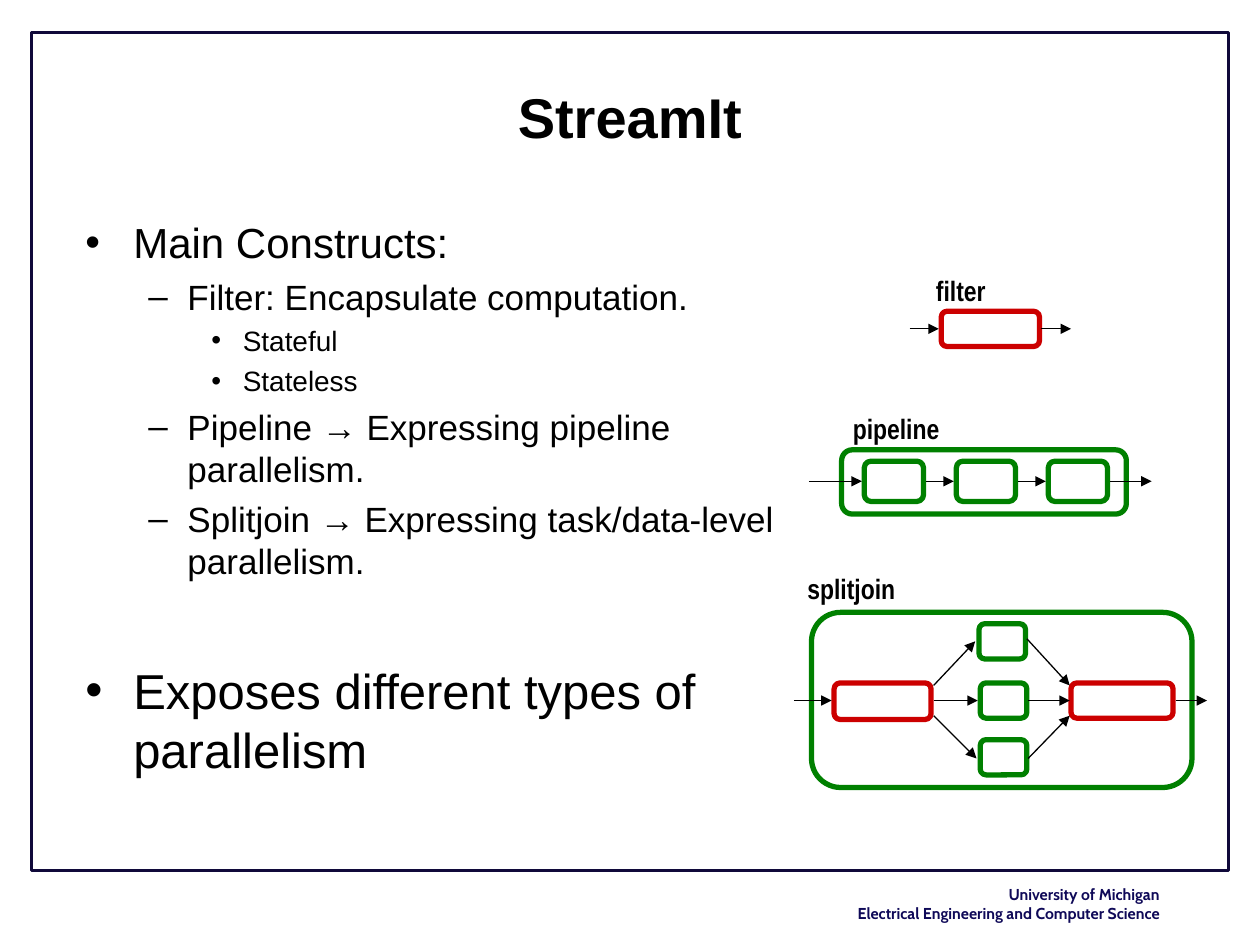
"""Builds the StreamIt slide with its three construct diagrams."""
from lxml import etree
from pptx import Presentation
from pptx.dml.color import RGBColor
from pptx.enum import shapes, text
from pptx.oxml import ns
from pptx.util import Inches, Pt

BLACK = RGBColor(0x00, 0x00, 0x00)
RED = RGBColor(0xCC, 0x00, 0x00)
GREEN = RGBColor(0x00, 0x80, 0x00)
NAVY = RGBColor(0x10, 0x09, 0x3A)
BLUE = RGBColor(0x0F, 0x09, 0x58)
LEFT, MID, RIGHT = text.PP_ALIGN.LEFT, text.PP_ALIGN.CENTER, text.PP_ALIGN.RIGHT
ROUND = shapes.MSO_SHAPE.FLOWCHART_ALTERNATE_PROCESS

prs = Presentation()
prs.slide_width, prs.slide_height = Inches(10), Inches(7.5)
slide = prs.slides.add_slide(prs.slide_layouts[6])


def add_box(kind, area, color, width):
    box = slide.shapes.add_shape(kind, *map(Inches, area))
    box.shadow.inherit = False
    box.fill.background()
    box.line.color.rgb = color
    box.line.width = Pt(width)


def add_text(area, lines, face, size, color, bold, align):
    frame = slide.shapes.add_textbox(*map(Inches, area)).text_frame
    frame.word_wrap = True
    for i, line in enumerate(lines):
        para = frame.paragraphs[0] if i == 0 else frame.add_paragraph()
        para.alignment = align
        run = para.add_run()
        run.text = line
        run.font.name = face
        run.font.size = Pt(size)
        run.font.bold = bold
        run.font.color.rgb = color
    return frame


add_box(shapes.MSO_SHAPE.RECTANGLE, (0.25, 0.26, 9.5, 6.65), NAVY, 1.5)
add_text((6.25, 6.97, 3.05, 0.4),
         ["University of Michigan", "Electrical Engineering and Computer Science"],
         "Cabin", 9, BLUE, True, RIGHT)
title = add_text((0.5, 0.3, 9, 1.25), ["StreamIt"], "Arial", 32, BLACK, True, MID)
title.vertical_anchor = text.MSO_ANCHOR.MIDDLE

levels = [("•", 0.38, 0.38), ("–", 0.81, 0.31), ("•", 1.25, 0.25)]
points = [
    (0, 24, 0, "Main Constructs:"),
    (1, 20, 4.6, "Filter: Encapsulate computation."),
    (2, 16, 3.7, "Stateful"),
    (2, 16, 3.7, "Stateless"),
    (1, 20, 4.6, "Pipeline → Expressing pipeline parallelism."),
    (1, 20, 4.6, "Splitjoin → Expressing task/data-level parallelism."),
    (0, 28, 45, "Exposes different types of parallelism"),
]
body = add_text((0.58, 1.67, 5.67, 5.08), [point[3] for point in points],
                "Arial", 24, BLACK, False, LEFT)
for para, (level, size, gap, _) in zip(body.paragraphs, points):
    mark, left, hang = levels[level]
    para.level = level
    props = para._p.get_or_add_pPr()
    props.set("marL", str(Inches(left)))
    props.set("indent", str(-Inches(hang)))
    etree.SubElement(props, ns.qn("a:buFont")).set("typeface", "Arial")
    etree.SubElement(props, ns.qn("a:buChar")).set("char", mark)
    para.space_before = Pt(gap)
    para.runs[0].font.size = Pt(size)

labels = [("filter", 7.33, 2.12, 0.69), ("pipeline", 6.67, 3.22, 1.04),
          ("splitjoin", 6.31, 4.49, 1.06)]
for name, left, top, width in labels:
    add_text((left, top, width, 0.37), [name], "Arial Narrow", 16, BLACK, True, LEFT)

boxes = [
    (RED, 7.47, 2.47, 0.78, 0.28),
    (GREEN, 6.68, 3.57, 2.26, 0.51),
    *[(GREEN, 6.86 + 0.73 * i, 3.66, 0.47, 0.32) for i in range(3)],
    (GREEN, 6.44, 4.86, 3.02, 1.39),
    (RED, 6.62, 5.42, 0.77, 0.29),
    (RED, 8.5, 5.42, 0.81, 0.28),
    (GREEN, 7.77, 4.95, 0.37, 0.28),
    (GREEN, 7.78, 5.42, 0.37, 0.28),
    (GREEN, 7.78, 5.87, 0.37, 0.28),
]
for color, *area in boxes:
    add_box(ROUND, area, color, 3)

rows = [
    (2.61, [(7.22, 7.45), (8.26, 8.5)]),
    (3.82, [(6.42, 6.84), (7.35, 7.57), (8.08, 8.3), (8.81, 9.14)]),
    (5.56, [(6.3, 6.6), (7.41, 7.76), (8.16, 8.49), (9.33, 9.58)]),
]
arrows = [(start, y, end, y) for y, spans in rows for start, end in spans]
arrows += [(7.41, 5.44, 7.74, 5.09), (7.41, 5.68, 7.75, 6.02),
           (8.15, 5.07, 8.49, 5.44), (8.16, 6.02, 8.49, 5.68)]
for ends in arrows:
    arrow = slide.shapes.add_connector(shapes.MSO_CONNECTOR.STRAIGHT, *map(Inches, ends))
    arrow.line.color.rgb = BLACK
    arrow.line.width = Pt(0.75)
    tip = etree.SubElement(arrow.line._get_or_add_ln(), ns.qn("a:tailEnd"))
    tip.set("type", "triangle")
    etree.SubElement(arrow._element.spPr, ns.qn("a:effectLst"))

prs.save("out.pptx")
